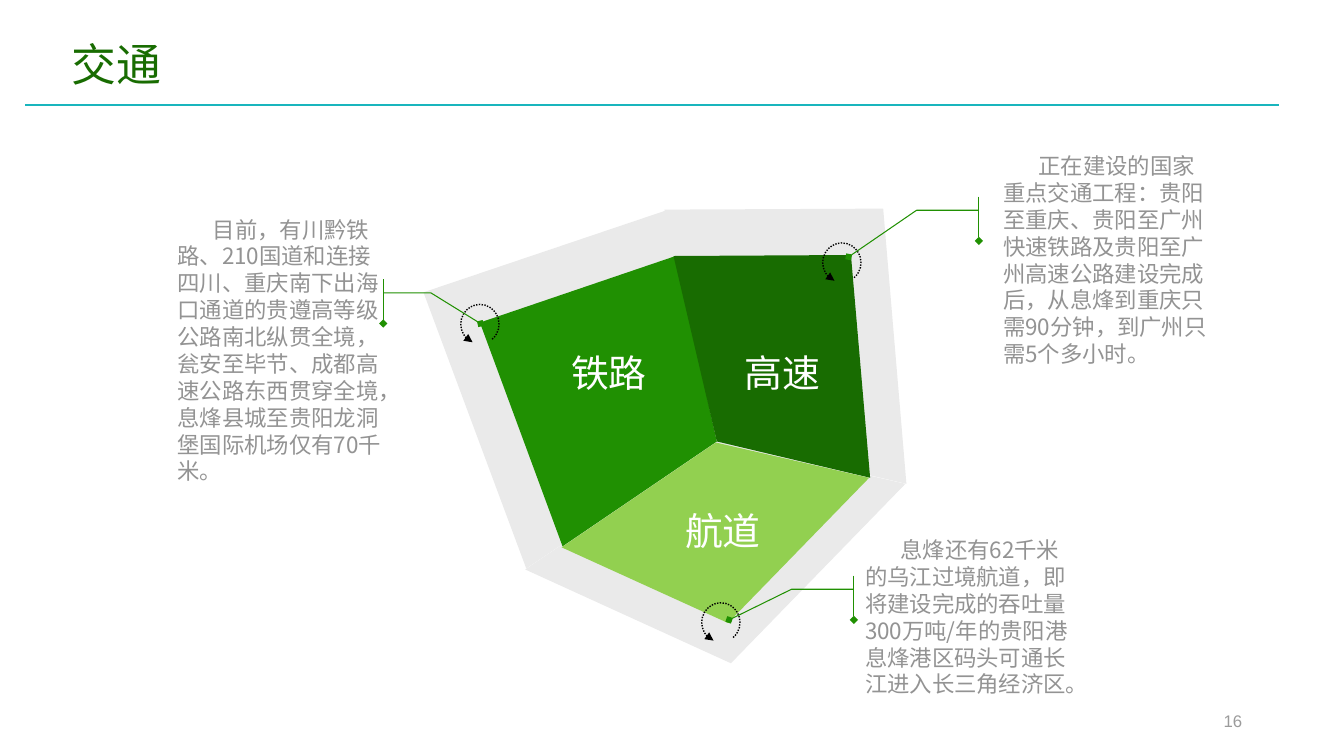
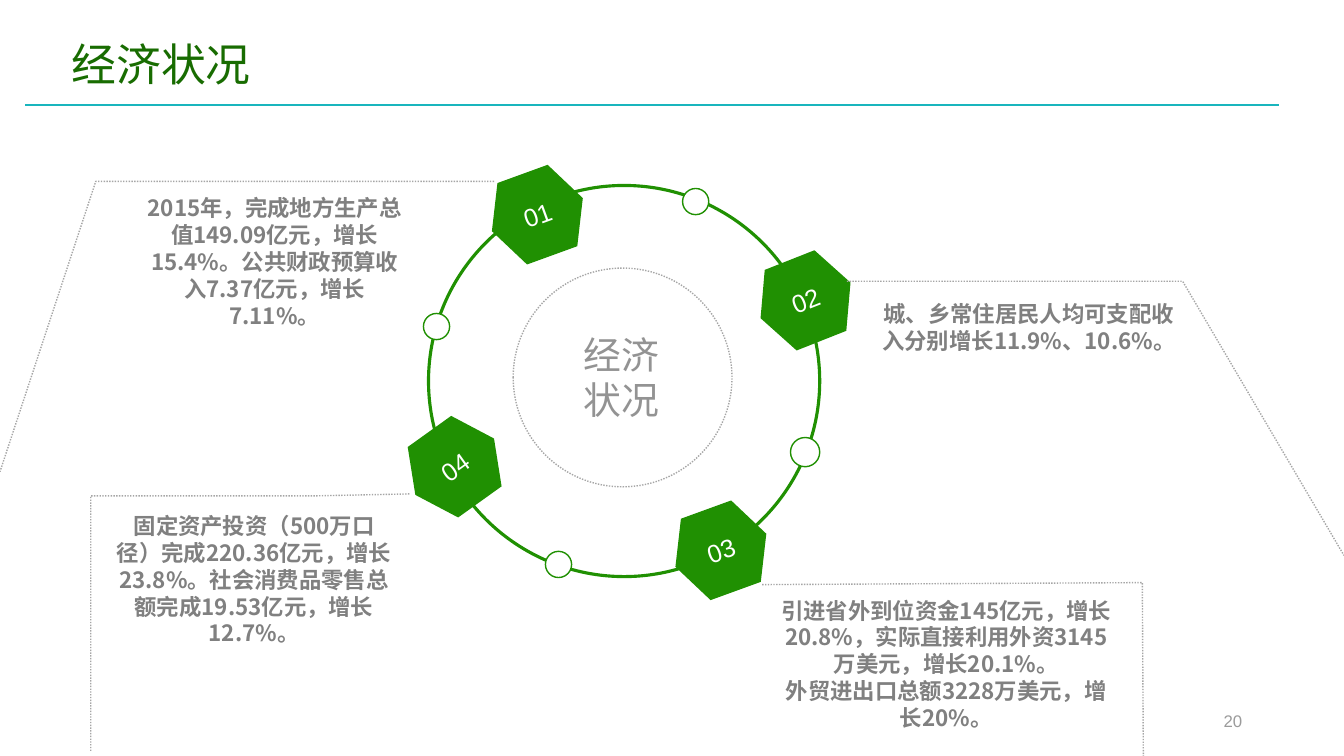
from dataclasses import dataclass
from typing import Optional

from pptx import Presentation
from pptx.dml.color import RGBColor
from pptx.enum.dml import MSO_LINE
from pptx.enum.shapes import MSO_CONNECTOR, MSO_SHAPE as Preset
from pptx.enum.text import MSO_ANCHOR as Anchor, PP_ALIGN as Align
from pptx.oxml.ns import qn
from pptx.util import Pt
from lxml.etree import SubElement

# Lengths: 100 px to the inch
PX = 9144
SLIDE_W, SLIDE_H = 1333, 750

# Colours
WHITE = RGBColor(0xFF, 0xFF, 0xFF)
BLACK = RGBColor(0x00, 0x00, 0x00)
TEAL = RGBColor(0x19, 0xB5, 0xBD)
DARK_GREEN = RGBColor(0x18, 0x6C, 0x01)
GREEN = RGBColor(0x20, 0x90, 0x02)
LIGHT_GREEN = RGBColor(0x92, 0xD0, 0x50)
HALO_GREY = RGBColor(0xEA, 0xEA, 0xEA)
LINE_GREY = RGBColor(0xA6, 0xA6, 0xA6)
NUMBER_GREY = RGBColor(0x9B, 0x9B, 0x9B)
BODY_GREY = RGBColor(0x93, 0x93, 0x93)
BOLD_GREY = RGBColor(0x80, 0x80, 0x80)

ARIAL, NOTO = "Arial", "Noto Sans CJK SC"
DEFAULT_INSETS = (10, 5, 10, 5)
WIDE_INSETS = (13, 7, 13, 7)

Box = tuple[int, int, int, int]
Points = list[tuple[int, int]]


@dataclass
class Wedge:
    outline: Points
    halo: Points
    colour: RGBColor
    label: str
    label_at: tuple[int, int]


@dataclass
class Note:
    box: Box
    paragraphs: list[str]


@dataclass
class Callout:
    box: Box
    adjustments: list[float]


@dataclass
class Hexagon:
    number: str
    left: int
    top: int
    rotation: float


# Content of the transport slide
WEDGES = [
    Wedge([(670, 254), (711, 438), (558, 542), (476, 320)],
          [(660, 209), (711, 436), (522, 564), (420, 290)],
          GREEN, "铁路", (556, 342)),
    Wedge([(668, 254), (711, 438), (863, 474), (844, 253)],
          [(659, 208), (711, 436), (899, 480), (876, 207)],
          DARK_GREEN, "高速", (728, 342)),
    Wedge([(557, 543), (710, 439), (862, 474), (722, 618)],
          [(521, 565), (710, 437), (898, 480), (725, 658)],
          LIGHT_GREEN, "航道", (669, 499)),
]
DIAL_CORNERS = [(457, 302), (696, 598), (816, 241)]
CALLOUTS = [
    Callout((856, 571, 182, 44), [0.31, -0.05, 0.31, -0.39, 1, -0.73]),
    Callout((189, 277, 182, 44), [0.31, 1.05, 0.31, 1.31, 1, 1.58]),
    Callout((980, 195, 182, 44), [0.31, -0.05, 0.31, -0.39, 1.36, -0.76]),
]
TRANSPORT_NOTES = [
    Note((163, 207, 231, 310), [
        "目前，有川黔铁路、210国道和连接四川、重庆南下出海口通道的贵遵高等级公路南北纵贯全境，"
        "瓮安至毕节、成都高速公路东西贯穿全境，息烽县城至贵阳龙洞堡国际机场仅有70千米。"]),
    Note((982, 144, 231, 256), [
        "正在建设的国家重点交通工程：贵阳至重庆、贵阳至广州快速铁路及贵阳至广州高速公路建设完成后，"
        "从息烽到重庆只需90分钟，到广州只需5个多小时。"]),
    Note((845, 525, 231, 175), [
        "息烽还有62千米的乌江过境航道，即将建设完成的吞吐量300万吨/年的贵阳港息烽港区码头可通"
        "长江进入长三角经济区。"]),
]

# Content of the economy slide
BEADS = [(784, 434, 29), (677, 187, 26), (541, 547, 26), (420, 311, 26)]
HEXAGONS = [
    Hexagon("03", 667, 503, 340),
    Hexagon("01", 485, 170, 340),
    Hexagon("02", 751, 255, 338.4),
    Hexagon("04", 403, 420, 324.4),
]
LEADERS = [
    [(406, 490), (310, 492), (90, 492), (90, 745)],
    [(490, 180), (95, 180), (0, 468)],
    [(840, 279), (1173, 279), (1333, 551)],
    [(756, 580), (1133, 578), (1134, 750)],
]
ECONOMY_NOTES = [
    Note((756, 585, 365, 148), [
        "引进省外到位资金145亿元，增长20.8%，实际直接利用外资3145万美元，增长20.1%。",
        "外贸进出口总额3228万美元，增长20%。"]),
    Note((131, 186, 283, 148), [
        "2015年，完成地方生产总值149.09亿元，增长15.4%。公共财政预算收入7.37亿元，增长7.11%。"]),
    Note((856, 291, 329, 67), [
        "城、乡常住居民人均可支配收入分别增长11.9%、10.6%。"]),
    Note((100, 501, 304, 175), [
        "固定资产投资（500万口径）完成220.36亿元，增长23.8%。社会消费品零售总额完成19.53亿元，增长12.7%。"]),
]


def emu(*lengths: int) -> list[int]:
    return [length * PX for length in lengths]


def write(frame, paragraphs: list[str], *, size: int, colour: RGBColor,
          font: str = NOTO, bold: bool = False, align=Align.LEFT,
          anchor=Anchor.TOP, insets: Box = DEFAULT_INSETS, wrap: bool = True,
          spacing: Optional[float] = None, indent: int = 0) -> None:
    """Fill a text frame with paragraphs of one format."""
    frame.word_wrap = wrap
    frame.vertical_anchor = anchor
    (frame.margin_left, frame.margin_top,
     frame.margin_right, frame.margin_bottom) = emu(*insets)
    for index, text in enumerate(paragraphs):
        paragraph = frame.add_paragraph() if index else frame.paragraphs[0]
        paragraph.alignment = align
        if spacing:
            paragraph.line_spacing = spacing
        if indent:
            properties = paragraph._p.get_or_add_pPr()
            properties.set("marL", "0")
            properties.set("indent", str(indent * PX))
        run = paragraph.add_run()
        run.text = text
        run.font.size, run.font.bold, run.font.name = Pt(size), bold, font
        run.font.color.rgb = colour
        SubElement(run._r.get_or_add_rPr(), qn("a:ea"), typeface=NOTO)


def add_text(slide, box: Box, paragraphs: list[str], **text_format) -> None:
    write(slide.shapes.add_textbox(*emu(*box)).text_frame, paragraphs, **text_format)


def paint(shape, *, fill: Optional[RGBColor] = None, line: Optional[RGBColor] = None,
          weight: float = 1, dotted: bool = False):
    """Set fill and outline, without shadow."""
    shape.shadow.inherit = False
    if fill is None:
        shape.fill.background()
    else:
        shape.fill.solid()
        shape.fill.fore_color.rgb = fill
    if line is None:
        shape.line.fill.background()
    else:
        shape.line.color.rgb = line
        shape.line.width = Pt(weight)
        if dotted:
            shape.line.dash_style = MSO_LINE.ROUND_DOT
    return shape


def add_preset(slide, preset, box: Box, **look):
    return paint(slide.shapes.add_shape(preset, *emu(*box)), **look)


def add_outline(slide, points: Points, *, close: bool, **look):
    builder = slide.shapes.build_freeform(*points[0], scale=PX)
    builder.add_line_segments(points[1:], close=close)
    return paint(builder.convert_to_shape(), **look)


def add_line_end(shape, end: str, kind: str) -> None:
    SubElement(shape.element.spPr.get_or_add_ln(), qn(f"a:{end}"), type=kind)


def add_page(deck, title: str, number: int):
    """Blank slide with the shared title, rule and page number."""
    slide = deck.slides.add_slide(deck.slide_layouts[6])
    rule = slide.shapes.add_connector(MSO_CONNECTOR.STRAIGHT, *emu(25, 104, 1269, 104))
    rule.line.color.rgb = TEAL
    rule.line.width = Pt(1)
    SubElement(rule.element.spPr, qn("a:effectLst"))
    add_text(slide, (61, 18, 1209, 77), [title], size=32, colour=DARK_GREEN,
             font=ARIAL, anchor=Anchor.BOTTOM, spacing=0.9)
    add_text(slide, (942, 695, 300, 40), [str(number)], size=12, colour=NUMBER_GREY,
             font=ARIAL, align=Align.RIGHT, anchor=Anchor.MIDDLE)
    return slide


def add_dial(slide, left: int, top: int) -> None:
    """Dotted arc, open at the bottom, with an arrow at its left end."""
    dial = add_preset(slide, Preset.ARC, (left, top, 38, 39), line=BLACK, dotted=True)
    for index, degrees in enumerate((112, 52)):
        dial.adjustments[index] = degrees * 60000 / 100000
    add_line_end(dial, "headEnd", "triangle")


def add_callout(slide, callout: Callout) -> None:
    shape = add_preset(slide, Preset.LINE_CALLOUT_2_ACCENT_BAR, callout.box,
                       line=GREEN, weight=0.75)
    for index, value in enumerate(callout.adjustments):
        shape.adjustments[index] = value
    add_line_end(shape, "tailEnd", "diamond")


def build_transport(deck) -> None:
    slide = add_page(deck, "交通", 16)
    # Three-part figure on its halo
    for wedge in WEDGES:
        add_outline(slide, wedge.halo, close=True, fill=HALO_GREY)
    for wedge in WEDGES:
        add_outline(slide, wedge.outline, close=True, fill=wedge.colour)
    for wedge in WEDGES:
        add_text(slide, (*wedge.label_at, 96, 56), [wedge.label], size=27,
                 colour=WHITE, align=Align.CENTER, wrap=False)
    # Dials, callouts and notes
    for corner in DIAL_CORNERS:
        add_dial(slide, *corner)
    for callout in CALLOUTS:
        add_callout(slide, callout)
    for note in TRANSPORT_NOTES:
        add_text(slide, note.box, note.paragraphs, size=16, colour=BODY_GREY,
                 insets=WIDE_INSETS, indent=35)


def build_economy(deck) -> None:
    slide = add_page(deck, "经济状况", 20)
    # Ring with beads and numbered hexagons
    add_preset(slide, Preset.OVAL, (425, 184, 388, 388), line=GREEN, weight=2.25)
    for left, top, diameter in BEADS:
        add_preset(slide, Preset.OVAL, (left, top, diameter, diameter),
                   fill=WHITE, line=GREEN)
    for item in HEXAGONS:
        hexagon = add_preset(slide, Preset.HEXAGON, (item.left, item.top, 96, 86), fill=GREEN)
        hexagon.rotation = item.rotation
        write(hexagon.text_frame, [item.number], size=18, colour=WHITE, font=ARIAL,
              align=Align.CENTER, anchor=Anchor.MIDDLE, insets=WIDE_INSETS)
    # Leaders and notes
    for leader in LEADERS:
        add_outline(slide, leader, close=False, line=LINE_GREY, dotted=True)
    for note in ECONOMY_NOTES:
        add_text(slide, note.box, note.paragraphs, size=16, colour=BOLD_GREY, bold=True,
                 align=Align.CENTER, insets=WIDE_INSETS)
    # Centre
    add_preset(slide, Preset.OVAL, (509, 266, 217, 217), line=LINE_GREY, dotted=True)
    add_text(slide, (568, 324, 96, 101), ["经济", "状况"], size=27, colour=BODY_GREY,
             align=Align.CENTER, wrap=False)


def main() -> None:
    deck = Presentation()
    deck.slide_width, deck.slide_height = emu(SLIDE_W, SLIDE_H)
    build_transport(deck)
    build_economy(deck)
    deck.save("out.pptx")


if __name__ == "__main__":
    main()
